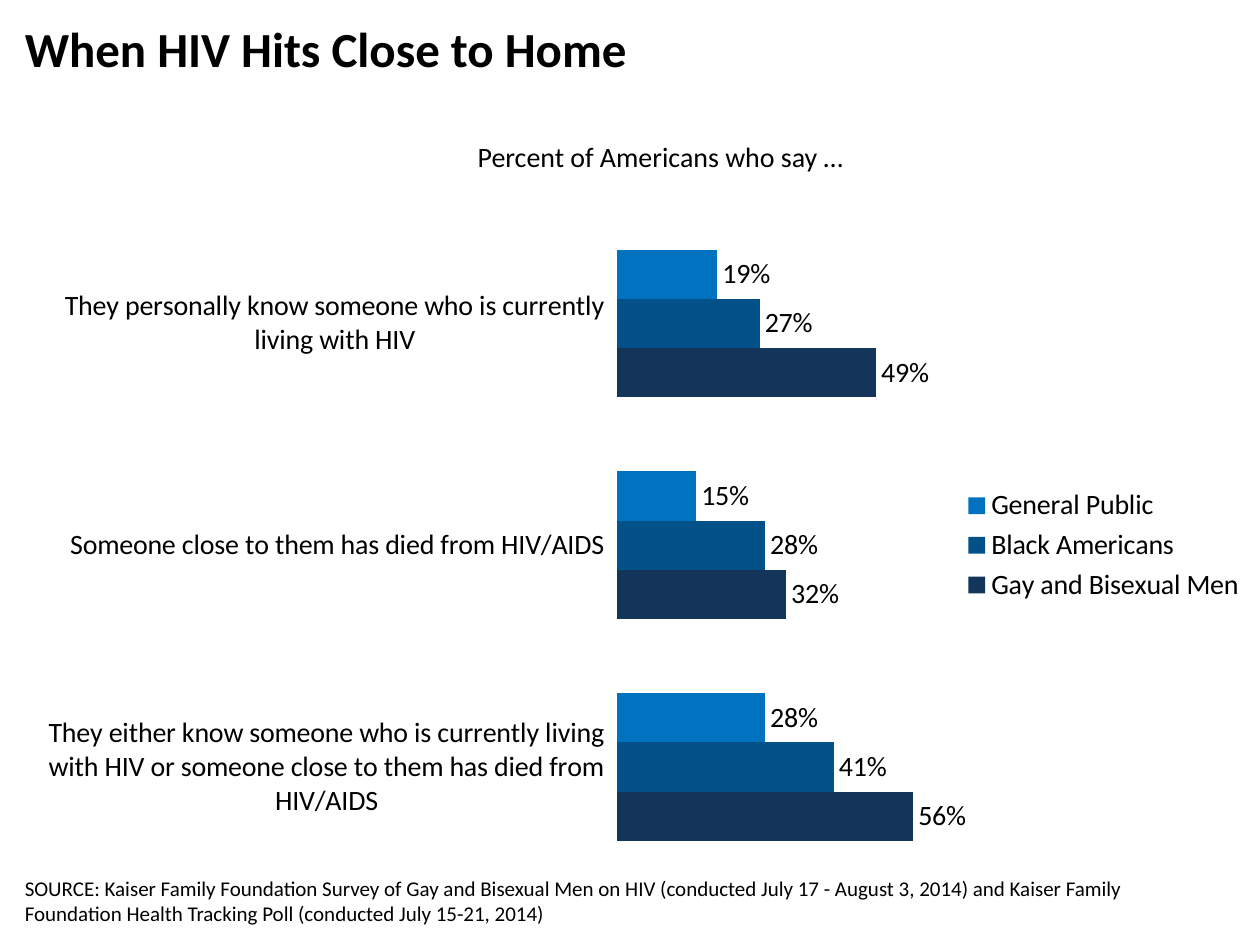
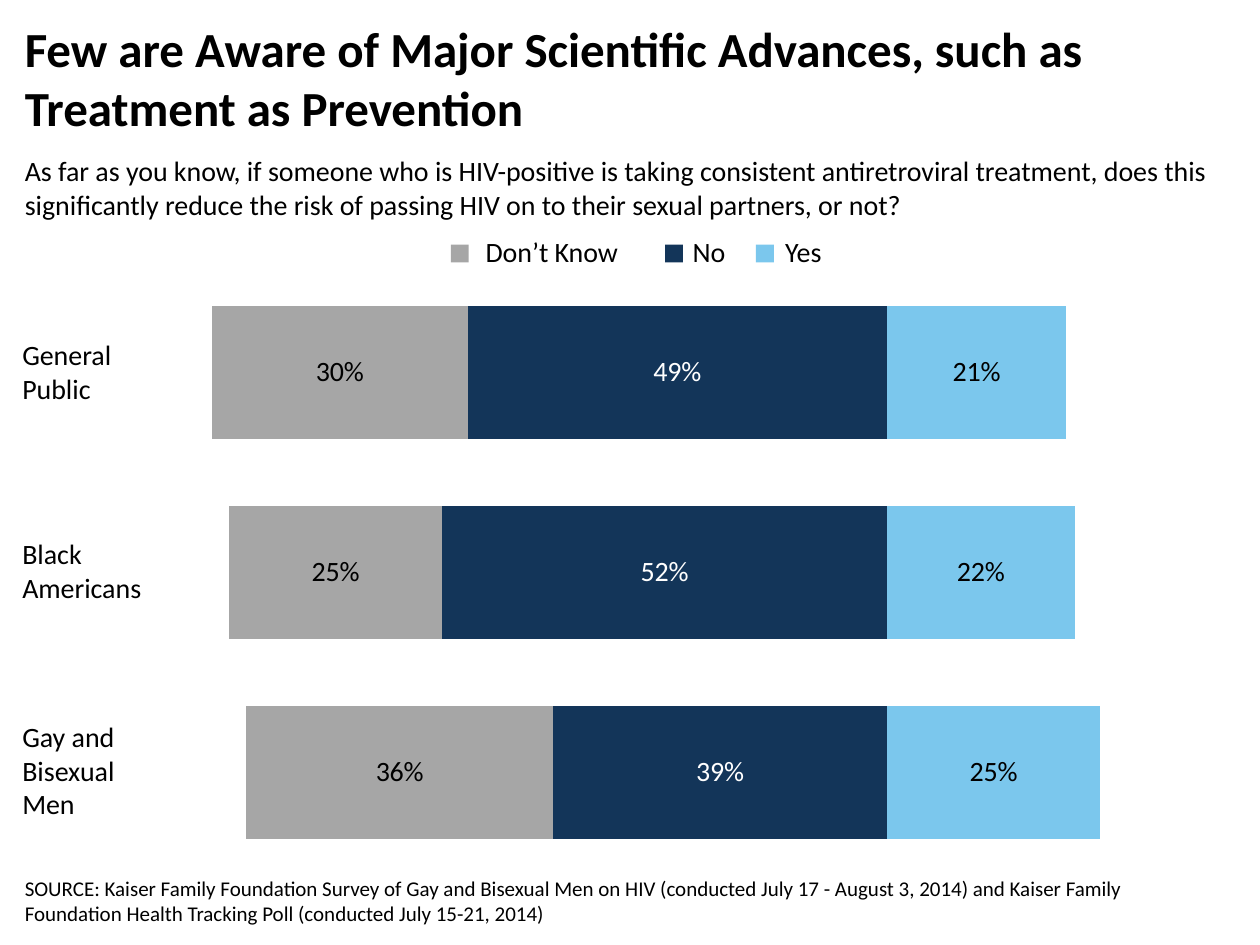
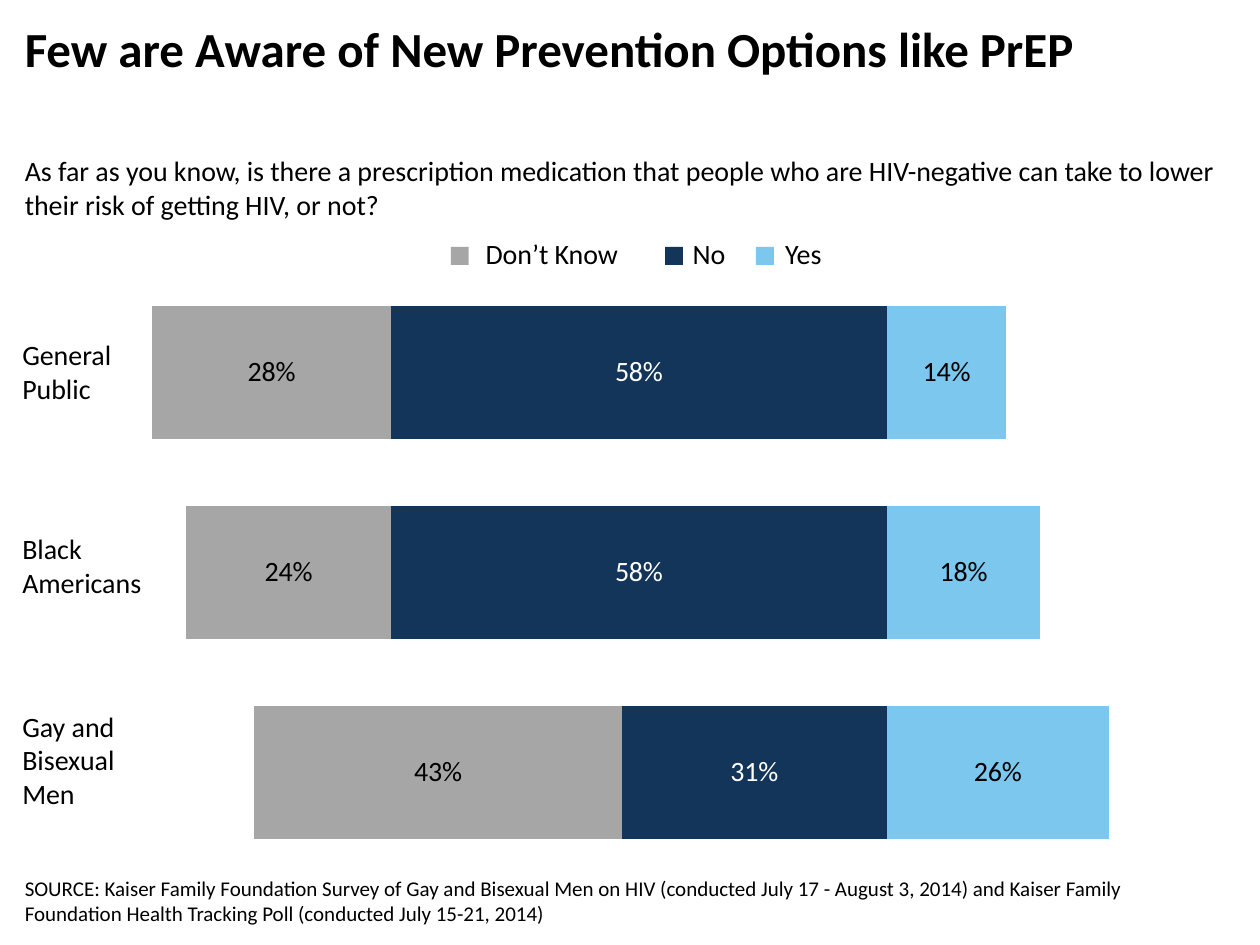
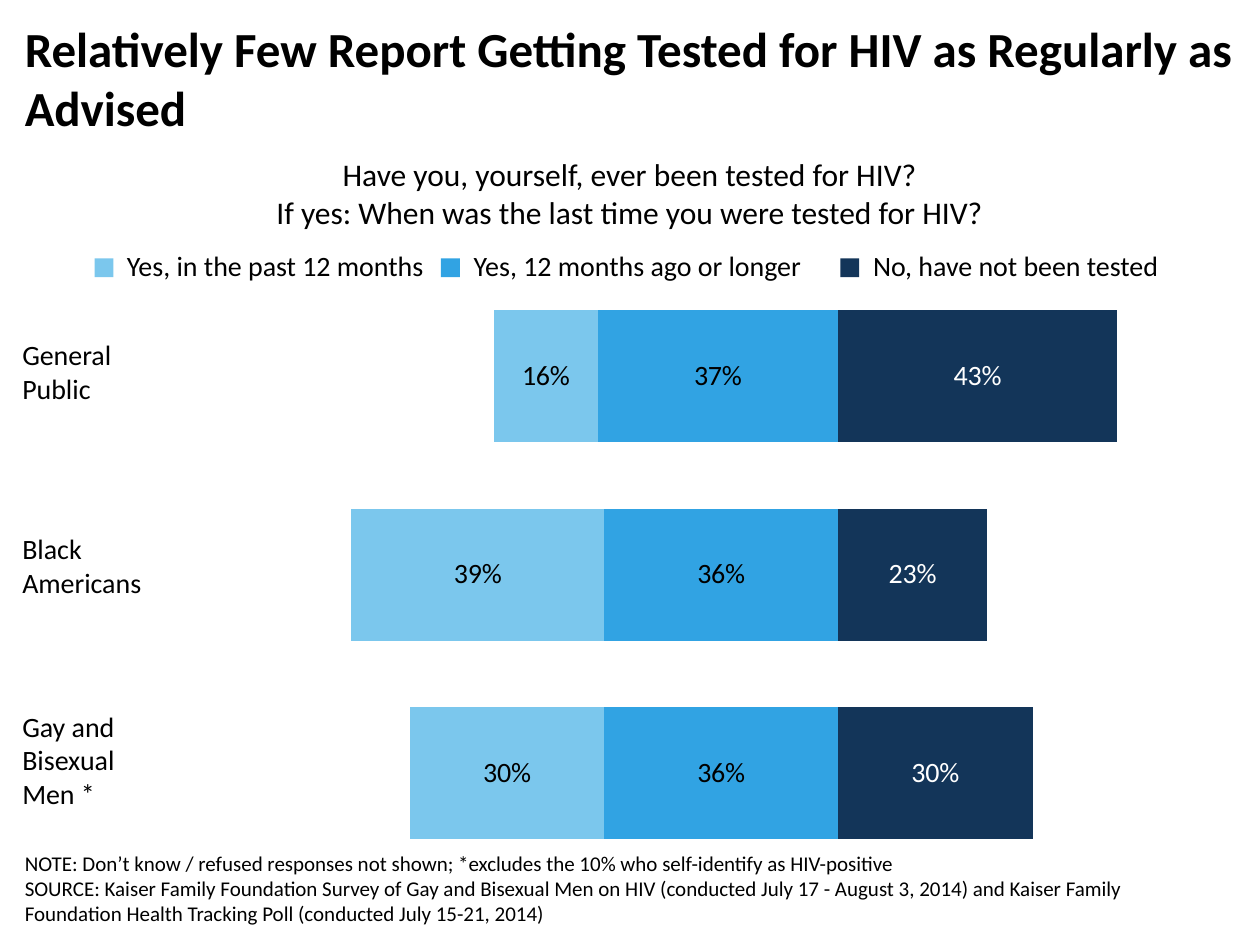
from pptx import Presentation
from pptx.chart.data import CategoryChartData as ChartData
from pptx.dml.color import RGBColor
from pptx.enum.chart import XL_CHART_TYPE as CHART, XL_LABEL_POSITION as LABEL
from pptx.enum.chart import XL_LEGEND_POSITION as LEGEND, XL_TICK_MARK as TICK
from pptx.enum.shapes import MSO_SHAPE as SHAPE
from pptx.enum.text import MSO_ANCHOR as ANCHOR, MSO_AUTO_SIZE as FIT, PP_ALIGN as ALIGN
from pptx.oxml import parse_xml
from pptx.oxml.ns import nsdecls, qn
from pptx.util import Cm, Pt

FONT = "Calibri"
COLORS = {
    "text": "000000", "white": "FFFFFF", "navy": "133559", "deep": "025189",
    "blue": "0072C0", "bright": "31A3E3", "sky": "7BC7ED", "gray": "A6A6A6",
}
SOURCE = ("SOURCE: Kaiser Family Foundation Survey of Gay and Bisexual Men on HIV "
          "(conducted July 17 - August 3, 2014) and Kaiser Family Foundation Health "
          "Tracking Poll (conducted July 15-21, 2014)")
NOTE = ("NOTE: Don’t know / refused responses not shown; "
        "*excludes the 10% who self-identify as HIV-positive")
GROUPS = ["Gay and Bisexual Men", "Black Americans", "General Public"]

EXPERIENCE = {
    "title": "When HIV Hits Close to Home",
    "caption": "Percent of Americans who say …",
    "categories": [
        "They either know someone who is currently living with HIV or someone close "
        "to them has died from HIV/AIDS",
        "Someone close to them has died from HIV/AIDS",
        "They personally know someone who is currently living with HIV",
    ],
    "series": [
        ("Gay and Bisexual Men", "navy", "text", (0.56, 0.32, 0.49)),
        ("Black Americans", "deep", "text", (0.41, 0.28, 0.27)),
        ("General Public", "blue", "text", (0.28, 0.15, 0.19)),
    ],
}

KNOW_KEY = [("Don’t Know", "gray", 9.09, 9.32, 3.61),
            ("No", "navy", 13.41, 13.34, 1.91),
            ("Yes", "sky", 15.24, 15.24, 1.91)]
TESTED_KEY = [("Yes, in the past 12 months", "sky", 1.91, 2.31, 6.58),
              ("Yes, 12 months ago or longer", "bright", 8.89, 9.3, 7.65),
              ("No, have not been tested", "navy", 16.94, 17.35, 6.38)]
KNOW_PLOT = (0.016, 0.106, 0.969, 0.866)
LABEL_TOPS = (14.17, 10.59, 6.68)

OPINIONS = [
    {
        "title": "Few are Aware of Major Scientific Advances, such as Treatment as Prevention",
        "question": ["As far as you know, if someone who is HIV-positive is taking consistent "
                     "antiretroviral treatment, does this significantly reduce the risk of "
                     "passing HIV on to their sexual partners, or not?"],
        "question_style": (2.97, 16, ALIGN.LEFT),
        "series": [("No", "navy", "white", (-0.39, -0.52, -0.49)),
                   ("Don’t Know", "gray", "text", (-0.36, -0.25, -0.3)),
                   ("Yes", "sky", "text", (0.25, 0.22, 0.21))],
        "plot": KNOW_PLOT, "axis_max": 0.4,
        "key": KNOW_KEY, "key_style": (4.6, 0.36, ALIGN.CENTER),
        "groups": GROUPS, "label_tops": (14.38, 10.69, 6.68),
        "footer": [SOURCE],
    },
    {
        "title": "Few are Aware of New Prevention Options like PrEP",
        "question": ["As far as you know, is there a prescription medication that people who "
                     "are HIV-negative can take to lower their risk of getting HIV, or not?"],
        "question_style": (2.97, 16, ALIGN.LEFT),
        "series": [("No", "navy", "white", (-0.31, -0.58, -0.58)),
                   ("Don’t Know", "gray", "text", (-0.43, -0.24, -0.28)),
                   ("Yes", "sky", "text", (0.26, 0.18, 0.14))],
        "plot": KNOW_PLOT, "axis_max": 0.4,
        "key": KNOW_KEY, "key_style": (4.65, 0.36, ALIGN.CENTER),
        "groups": GROUPS, "label_tops": LABEL_TOPS,
        "footer": [SOURCE],
    },
    {
        "title": "Relatively Few Report Getting Tested for HIV as Regularly as Advised",
        "question": ["Have you, yourself, ever been tested for HIV?",
                     "If yes: When was the last time you were tested for HIV?"],
        "question_style": (3, 18, ALIGN.CENTER),
        "series": [("Yes, 12 months ago or longer", "bright", "text", (-0.36, -0.36, -0.37)),
                   ("Yes, in the past 12 months", "sky", "text", (-0.3, -0.39, -0.16)),
                   ("No, have not been tested", "navy", "white", (0.3, 0.23, 0.43))],
        "plot": (0.143, 0.113, 0.841, 0.859), "axis_max": 0.6,
        "key": TESTED_KEY, "key_style": (4.88, 0.38, ALIGN.LEFT),
        "groups": ["Gay and Bisexual Men *"] + GROUPS[1:], "label_tops": LABEL_TOPS,
        "footer": [NOTE, SOURCE],
    },
]


def rgb(name):
    return RGBColor.from_string(COLORS[name])


def set_font(font, size, color="text", bold=False):
    font.name, font.size, font.bold = FONT, Pt(size), bold
    font.color.rgb = rgb(color)


def add_text(shapes, box, lines, size=16, align=ALIGN.LEFT, bold=False,
             anchor=ANCHOR.TOP, fit=FIT.SHAPE_TO_FIT_TEXT):
    tf = shapes.add_textbox(*map(Cm, box)).text_frame
    tf.word_wrap, tf.auto_size, tf.vertical_anchor = True, fit, anchor
    for i, line in enumerate(lines):
        p = tf.add_paragraph() if i else tf.paragraphs[0]
        p.alignment = align
        r = p.add_run()
        r.text = line
        set_font(r.font, size, bold=bold)


def add_frame(s, title, footer):
    add_text(s.shapes, (0.25, 17.27, 23.11, 1.52), footer, 12,
             anchor=ANCHOR.BOTTOM, fit=FIT.NONE)
    add_text(s.shapes, (0.25, 0.25, 24.89, 2.54), [title], 28, bold=True, fit=FIT.NONE)


def add_bars(s, kind, left, categories, series, gap, position, number_format="0%"):
    data = ChartData(number_format="0%")
    data.categories = categories
    for name, _, _, values in series:
        data.add_series(name, values)
    chart = s.shapes.add_chart(kind, Cm(left), Cm(4.01), Cm(24.89), Cm(13.97), data).chart
    set_font(chart.font, 18)
    chart.has_title = chart.has_legend = False
    chart.value_axis.has_major_gridlines = False
    chart.value_axis.visible = False
    plot = chart.plots[0]
    plot.gap_width, plot.vary_by_categories = gap, False
    for ser, (_, fill, label_color, _) in zip(plot.series, series):
        ser.invert_if_negative = False
        ser.format.fill.solid()
        ser.format.fill.fore_color.rgb = rgb(fill)
        labels = ser.data_labels
        labels.show_value = True
        labels.position = position
        labels.number_format, labels.number_format_is_linked = number_format, False
        set_font(labels.font, 16, label_color)
    return chart


def place_plot(chart, box):
    area = chart._chartSpace.chart.plotArea
    for old in area.findall(qn("c:layout")):
        area.remove(old)
    sizes = "".join(f'<c:{tag} val="{v}"/>' for tag, v in zip("xywh", box))
    area.insert(0, parse_xml(
        f'<c:layout {nsdecls("c")}><c:manualLayout><c:layoutTarget val="inner"/>'
        f'<c:xMode val="edge"/><c:yMode val="edge"/>{sizes}</c:manualLayout></c:layout>'))


def add_key(s, items, style):
    top, side, align = style
    shapes = s.shapes.add_group_shape().shapes
    for name, color, swatch_left, text_left, width in items:
        add_text(shapes, (text_left, top, width, 0.94), [name], align=align)
        swatch = shapes.add_shape(SHAPE.RECTANGLE, Cm(swatch_left), Cm(top + 0.33),
                                  Cm(side), Cm(side))
        swatch.shadow.inherit = False
        swatch.fill.solid()
        swatch.fill.fore_color.rgb = rgb(color)
        swatch.line.fill.background()


def add_experience(s, c):
    chart = add_bars(s, CHART.BAR_CLUSTERED, 0.48, c["categories"], c["series"],
                     150, LABEL.OUTSIDE_END)
    axis = chart.category_axis
    axis.major_tick_mark = TICK.OUTSIDE
    axis.format.line.fill.background()
    set_font(axis.tick_labels.font, 16)
    chart.has_legend = True
    chart.legend.position, chart.legend.include_in_layout = LEGEND.RIGHT, False
    set_font(chart.legend.font, 16)
    add_frame(s, c["title"], [SOURCE])
    add_text(s.shapes, (2.9, 2.69, 20.83, 0.94), [c["caption"]], align=ALIGN.CENTER)


def add_opinion(s, c):
    chart = add_bars(s, CHART.BAR_STACKED, 0.25, c["groups"], c["series"],
                     50, LABEL.CENTER, "0%;0%")
    chart.plots[0].overlap = 100
    chart.category_axis.visible = False
    chart.value_axis.minimum_scale, chart.value_axis.maximum_scale = -1, c["axis_max"]
    place_plot(chart, c["plot"])
    add_frame(s, c["title"], c["footer"])
    for group, top, width, height in zip(c["groups"], c["label_tops"],
                                         (3.1, 3.61, 2.97), (2.31, 1.63, 1.63)):
        add_text(s.shapes, (0.2, top, width, height), [group])
    top, size, align = c["question_style"]
    add_text(s.shapes, (0.25, top, 24.89, 1.63), c["question"], size, align)
    add_key(s, c["key"], c["key_style"])


def main():
    prs = Presentation()
    prs.slide_width, prs.slide_height = Cm(25.4), Cm(19.05)
    blank = prs.slide_layouts[6]
    add_experience(prs.slides.add_slide(blank), EXPERIENCE)
    for opinion in OPINIONS:
        add_opinion(prs.slides.add_slide(blank), opinion)
    prs.save("out.pptx")


if __name__ == "__main__":
    main()
